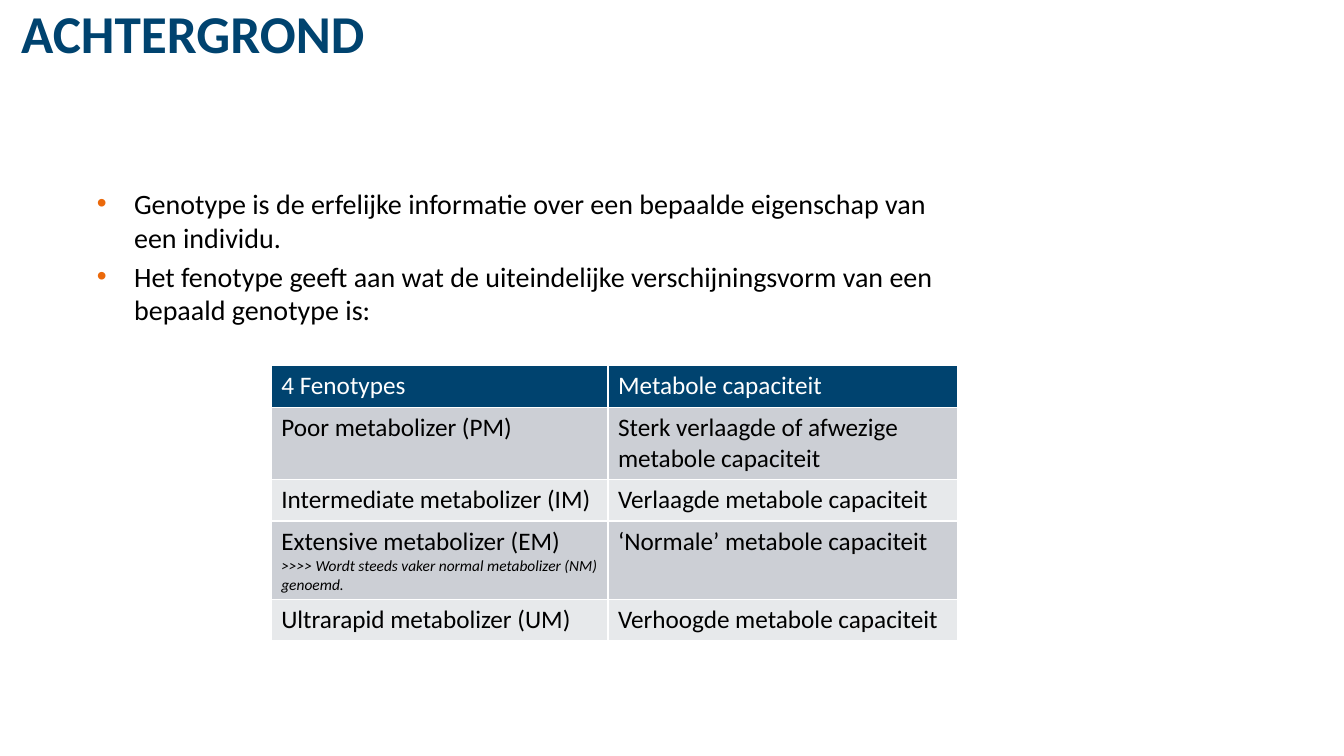
from lxml import etree
from pptx import Presentation
from pptx import util as u
from pptx.dml.color import RGBColor
from pptx.oxml.ns import qn

# Content
TITLE = "ACHTERGROND"
BULLETS = [
    "Genotype is de erfelijke informatie over een bepaalde eigenschap van een individu.",
    "Het fenotype geeft aan wat de uiteindelijke verschijningsvorm van een bepaald genotype is:",
]
PHENOTYPES = [
    ("4 Fenotypes", "Metabole capaciteit"),
    ("Poor metabolizer (PM)", "Sterk verlaagde of afwezige metabole capaciteit"),
    ("Intermediate metabolizer (IM)", "Verlaagde metabole capaciteit"),
    ("Extensive metabolizer (EM)", "‘Normale’ metabole capaciteit"),
    ("Ultrarapid metabolizer (UM)", "Verhoogde metabole capaciteit"),
]
NOTES = {(3, 0): ">>>> Wordt steeds vaker normal metabolizer (NM) genoemd."}

# Layout in inches, and colours
WIDTH, HEIGHT = 13.33, 7.5
TITLE_AREA = (0.21, 0, 12.67, 0.64)
BODY_AREA = (0.96, 1.85, 8.62, 1.5)
TABLE_LEFT, TABLE_TOP = 2.69, 3.63
COLUMNS = (3.34, 3.47)
ROWS = (0.41, 0.72, 0.41, 0.78, 0.41)
INDENT = 0.37
NAVY, ORANGE, BLACK, WHITE = "00436F", "EB690B", "000000", "FFFFFF"
BANDS = ("E7E9EB", "CCCFD5")


def colour(value):
    return RGBColor.from_string(value)


def add_run(para, words, size, ink, bold=False, italic=False):
    span = para.add_run()
    span.text = words
    font = span.font
    font.name, font.size = "Calibri", u.Pt(size)
    font.bold, font.italic = bold, italic
    font.color.rgb = colour(ink)


def add_text_frame(page, area):
    frame = page.shapes.add_textbox(*map(u.Inches, area)).text_frame
    frame.word_wrap = True
    frame.margin_left = frame.margin_right = frame.margin_top = frame.margin_bottom = 0
    return frame


def add_bullet(para):
    props = para._p.get_or_add_pPr()
    props.set("marL", str(u.Inches(INDENT)))
    props.set("indent", str(-u.Inches(INDENT)))
    tint = etree.SubElement(props, qn("a:buClr"))
    etree.SubElement(tint, qn("a:srgbClr"), val=ORANGE)
    etree.SubElement(props, qn("a:buFont"), typeface="Arial")
    etree.SubElement(props, qn("a:buChar"), char="•")


def add_borders(cell):
    props = cell._tc.get_or_add_tcPr()
    for side in ("lnL", "lnR", "lnT", "lnB"):
        line = etree.SubElement(props, qn("a:" + side), w=str(u.Pt(1)))
        fill = etree.SubElement(line, qn("a:solidFill"))
        etree.SubElement(fill, qn("a:srgbClr"), val=WHITE)


deck = Presentation()
deck.slide_width, deck.slide_height = u.Inches(WIDTH), u.Inches(HEIGHT)
page = deck.slides.add_slide(deck.slide_layouts[6])

# Title
add_run(add_text_frame(page, TITLE_AREA).paragraphs[0], TITLE, 38, NAVY, bold=True)

# Bullets
body = add_text_frame(page, BODY_AREA)
for i, words in enumerate(BULLETS):
    para = body.add_paragraph() if i else body.paragraphs[0]
    if i:
        para.space_before = u.Pt(4)
    add_bullet(para)
    add_run(para, words, 20, BLACK)

# Table of phenotypes
area = (TABLE_LEFT, TABLE_TOP, sum(COLUMNS), sum(ROWS))
table = page.shapes.add_table(len(ROWS), len(COLUMNS), *map(u.Inches, area)).table
for column, width in zip(table.columns, COLUMNS):
    column.width = u.Inches(width)
for r, (row, height) in enumerate(zip(table.rows, ROWS)):
    row.height = u.Inches(height)
    for c, words in enumerate(PHENOTYPES[r]):
        cell = table.cell(r, c)
        add_borders(cell)
        cell.fill.solid()
        cell.fill.fore_color.rgb = colour(BANDS[r % 2] if r else NAVY)
        frame = cell.text_frame
        add_run(frame.paragraphs[0], words, 18, BLACK if r else WHITE)
        if (r, c) in NOTES:
            add_run(frame.add_paragraph(), NOTES[r, c], 11, BLACK, italic=True)

deck.save("out.pptx")
